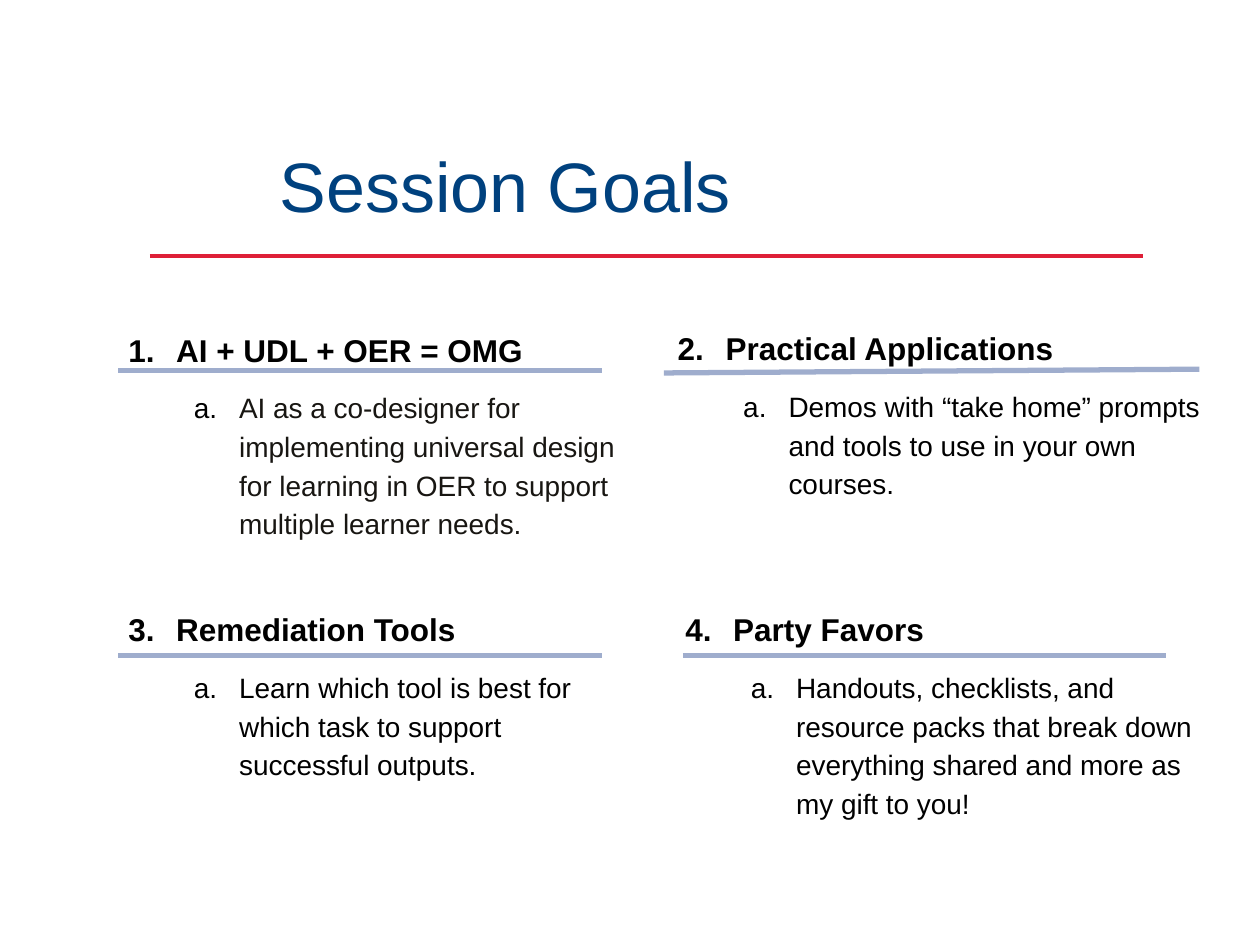
from lxml import etree
from pptx import Presentation, util as u
from pptx.dml.color import RGBColor
from pptx.enum import shapes, text
from pptx.oxml.ns import qn

FONT = "Arial"
COLORS = {"title": "00417E", "accent": "DE1F37", "rule": "9FADCD",
          "ink": "000000", "soft_ink": "181612"}
TITLE = "Session Goals"

ROWS = [2.53, 4.75]
BOX_HEIGHT = 1.54
LEFT_COLUMN = (0.8, 4.23)
# heading, detail, detail colour, box (left, top, width), rule (x1, y1, x2, y2)
GOALS = [
    ("AI + UDL + OER = OMG",
     "AI as a co-designer for implementing universal design for learning "
     "in OER to support multiple learner needs.",
     "soft_ink", (LEFT_COLUMN[0], ROWS[0], LEFT_COLUMN[1]), (0.94, 2.94, 4.78, 2.94)),
    ("Practical Applications",
     "Demos with “take home” prompts and tools to use in your own courses.",
     "ink", (5.16, ROWS[0] - 0.01, 4.48), (5.27, 2.96, 9.52, 2.93)),
    ("Remediation Tools",
     "Learn which tool is best for which task to support successful outputs.",
     "ink", (LEFT_COLUMN[0], ROWS[1], LEFT_COLUMN[1]), (0.94, 5.2, 4.78, 5.2)),
    ("Party Favors",
     "Handouts, checklists, and resource packs that break down everything "
     "shared and more as my gift to you!",
     "ink", (5.22, ROWS[1], 4.42), (5.42, 5.2, 9.25, 5.2)),
]


def add_span(para, words, size, color, bold=False):
    span = para.add_run()
    span.text = words
    span.font.name = FONT
    span.font.size = u.Pt(size)
    span.font.bold = bold
    span.font.color.rgb = RGBColor.from_string(COLORS[color])


def number_paragraph(para, scheme, start, margin, indent):
    """Give the paragraph an automatic number with a hanging indent."""
    props = para._p.get_or_add_pPr()
    props.set("marL", str(u.Inches(margin)))
    props.set("indent", str(u.Inches(indent)))
    bullet_color = etree.SubElement(props, qn("a:buClr"))
    etree.SubElement(bullet_color, qn("a:srgbClr"), val=COLORS["ink"])
    etree.SubElement(props, qn("a:buFont"), typeface=FONT)
    etree.SubElement(props, qn("a:buAutoNum"), type=scheme, startAt=str(start))
    para.line_spacing = 1.15


def add_rule(slide, ends, color, weight):
    line = slide.shapes.add_connector(shapes.MSO_CONNECTOR.STRAIGHT,
                                      *(u.Inches(end) for end in ends))
    line.line.color.rgb = RGBColor.from_string(COLORS[color])
    line.line.width = u.Pt(weight)
    etree.SubElement(line._element.spPr, qn("a:effectLst"))


def add_goal(slide, number, heading, detail, detail_color, place):
    left, top, width = place
    box = slide.shapes.add_textbox(*(u.Inches(n) for n in (left, top, width, BOX_HEIGHT)))
    frame = box.text_frame
    frame.word_wrap = True

    para = frame.paragraphs[0]
    number_paragraph(para, "arabicPeriod", number, 0.5, -0.38)
    add_span(para, heading, 18, "ink", bold=True)

    para = frame.add_paragraph()
    para.level = 1
    number_paragraph(para, "alphaLcPeriod", 1, 1, -0.36)
    para.space_before = u.Pt(10)
    add_span(para, detail, 16, detail_color)


def set_title(slide):
    title = slide.shapes.title
    title.left, title.top, title.width, title.height = (
        u.Inches(n) for n in (2.12, 0.88, 7.88, 0.98))
    frame = title.text_frame
    frame.auto_size = text.MSO_AUTO_SIZE.NONE
    frame.vertical_anchor = text.MSO_ANCHOR.BOTTOM
    para = frame.paragraphs[0]
    para.alignment = text.PP_ALIGN.LEFT
    para.line_spacing = 0.9
    add_span(para, TITLE, 40, "title")


def main():
    deck = Presentation()
    deck.slide_width, deck.slide_height = u.Inches(10), u.Inches(7.5)
    page = deck.slides.add_slide(deck.slide_layouts[5])
    set_title(page)
    add_rule(page, (1.19, 2.03, 9.07, 2.03), "accent", 2.5)
    for number, (heading, detail, color, place, ends) in enumerate(GOALS, 1):
        add_goal(page, number, heading, detail, color, place)
        add_rule(page, ends, "rule", 3)
    deck.save("out.pptx")


if __name__ == "__main__":
    main()
